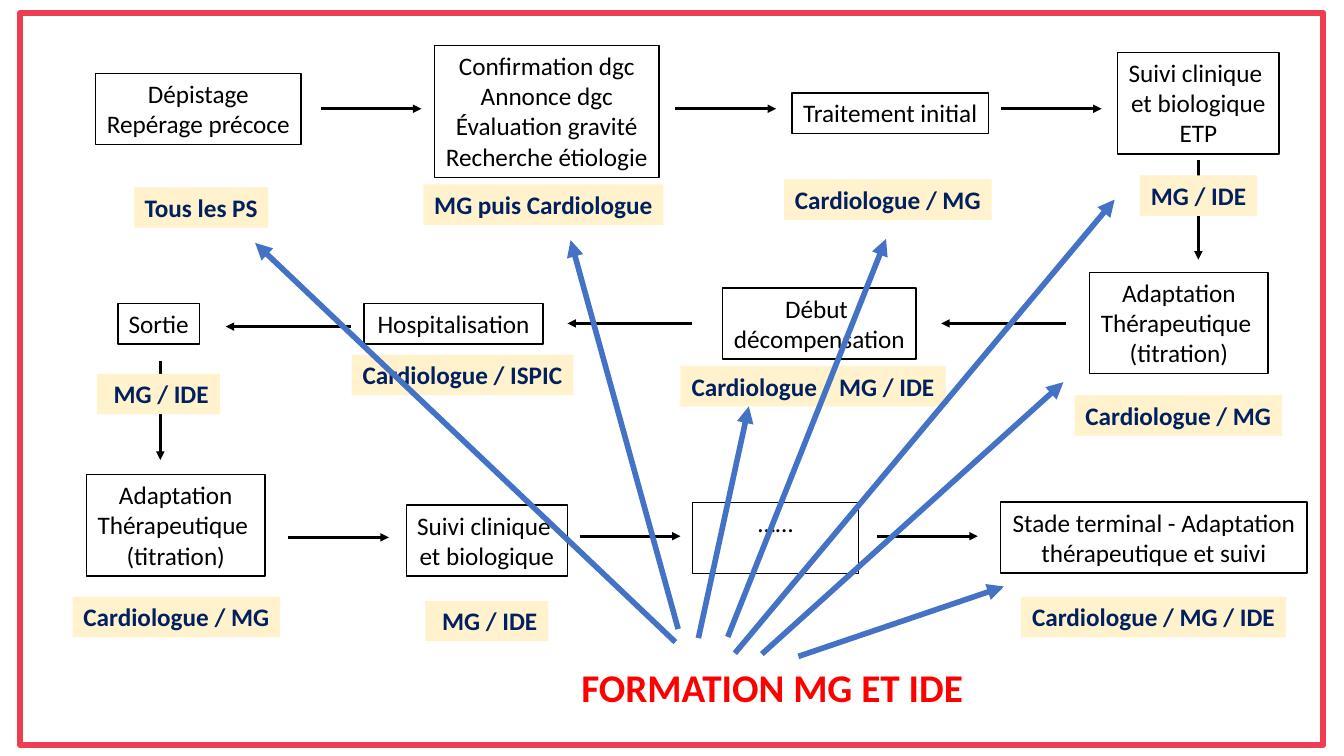
from lxml import etree
from pptx import Presentation
from pptx.dml.color import RGBColor
from pptx.enum.shapes import MSO_CONNECTOR, MSO_SHAPE
from pptx.enum.text import PP_ALIGN
from pptx.oxml.ns import qn
from pptx.util import Cm, Pt

FONT = "Calibri"
RED, BLACK, BLUE = "EE3D50", "000000", "4472C4"
CREAM, NAVY, TITLE_RED = "FFF2CC", "002060", "FF0000"
LINE_HEIGHT, BOX_PADDING = 0.77, 0.25

# All positions and lengths are in centimetres.
FRAME = (0.51, 0.33, 32.84, 18.44)
TRAINING = ("FORMATION MG ET IDE", 14.4, 16.59, 10.24)

# text, left, top, width, rows
STEPS = [
    ("Dépistage\nRepérage précoce", 2.41, 1.85, 5.18, 2),
    ("Confirmation dgc\nAnnonce dgc\nÉvaluation gravité\nRecherche étiologie",
     10.95, 1.14, 5.66, 4),
    ("Traitement initial", 19.96, 2.34, 4.95, 1),
    ("Suivi clinique \net biologique\nETP", 28.17, 1.32, 4.06, 3),
    ("Début \ndécompensation", 18.21, 7.26, 4.88, 2),
    ("Hospitalisation", 9.17, 7.65, 4.52, 1),
    ("Sortie", 2.97, 7.65, 2.06, 1),
    ("Adaptation\nThérapeutique \n(titration)", 27.46, 6.86, 4.5, 3),
    ("Adaptation\nThérapeutique \n(titration)", 2.18, 11.96, 4.5, 3),
    ("Suivi clinique \net biologique", 10.24, 12.73, 4.06, 2),
    ("……", 17.45, 12.67, 4.19, 2),
    ("Stade terminal - Adaptation\nthérapeutique et suivi", 25.22, 12.65, 7.72, 2),
]

# text, left, top, width
ROLES = [
    ("Tous les PS", 3.38, 4.72, 3.38),
    ("MG puis Cardiologue", 10.67, 4.65, 6.05),
    ("Cardiologue / MG", 19.76, 4.52, 5.23),
    ("MG / IDE", 28.73, 4.42, 2.95),
    ("Cardiologue / MG", 27.08, 9.96, 5.23),
    ("Cardiologue / MG / IDE", 17.15, 9.22, 6.68),
    ("Cardiologue / ISPIC", 8.86, 8.94, 5.59),
    (" MG / IDE", 2.44, 9.42, 3.1),
    ("Cardiologue / MG", 1.83, 15.04, 5.23),
    (" MG / IDE", 10.72, 15.14, 3.1),
    ("Cardiologue / MG / IDE", 25.73, 15.04, 6.68),
]

# start x, start y, run across, run down
FLOW = [
    (8.08, 2.74, 2.54, 0), (17.02, 2.74, 2.54, 0), (25.22, 2.74, 2.54, 0),
    (30.2, 4.04, 0, 2.5),
    (26.87, 8.15, -3.15, 0), (17.45, 8.15, -3.15, 0), (8.84, 8.23, -3.15, 0),
    (4.04, 9.09, 0, 2.5),
    (7.26, 13.54, 2.54, 0), (14.61, 13.51, 2.54, 0), (22.1, 13.51, 2.54, 0),
]

# start x, start y, end x, end y
TRAINING_ARROWS = [
    (17.02, 16.18, 6.43, 6.12),
    (18.34, 16.05, 22.33, 6.02),
    (18.52, 16.46, 28.09, 5.03),
    (19.2, 16.48, 26.8, 9.63),
    (17.6, 16.08, 18.87, 10.24),
    (20.12, 16.54, 25.3, 14.78),
    (17.09, 15.85, 14.38, 6.05),
]


def color(hex_value):
    return RGBColor.from_string(hex_value)


def outline(shape, hex_value, points):
    shape.line.color.rgb = color(hex_value)
    shape.line.width = Pt(points)


def add_label(slide, text, left, top, width, height, ink,
              size=18, bold=False, align=PP_ALIGN.CENTER):
    label = slide.shapes.add_textbox(Cm(left), Cm(top), Cm(width), Cm(height))
    label.text_frame.word_wrap = False
    label.text_frame.text = text
    for paragraph in label.text_frame.paragraphs:
        paragraph.alignment = align
        font = paragraph.font
        font.name, font.size, font.bold = FONT, Pt(size), bold
        font.color.rgb = color(ink)
    return label


def add_arrow(slide, x1, y1, x2, y2, ink, points):
    arrow = slide.shapes.add_connector(
        MSO_CONNECTOR.STRAIGHT, Cm(x1), Cm(y1), Cm(x2), Cm(y2))
    outline(arrow, ink, points)
    etree.SubElement(arrow.line._get_or_add_ln(), qn("a:tailEnd"), type="triangle")
    etree.SubElement(arrow._element.spPr, qn("a:effectLst"))


def main():
    deck = Presentation()
    deck.slide_width, deck.slide_height = Cm(33.87), Cm(19.05)
    slide = deck.slides.add_slide(deck.slide_layouts[6])

    frame = slide.shapes.add_shape(MSO_SHAPE.RECTANGLE, *map(Cm, FRAME))
    frame.shadow.inherit = False
    frame.fill.background()
    outline(frame, RED, 4.5)

    for text, left, top, width, rows in STEPS:
        height = rows * LINE_HEIGHT + BOX_PADDING
        step = add_label(slide, text, left, top, width, height, BLACK)
        outline(step, BLACK, 1)

    for x, y, across, down in FLOW:
        add_arrow(slide, x, y, x + across, y + down, BLACK, 2)

    for text, left, top, width in ROLES:
        role = add_label(slide, text, left, top, width,
                         LINE_HEIGHT + BOX_PADDING, NAVY, bold=True)
        role.fill.solid()
        role.fill.fore_color.rgb = color(CREAM)

    add_label(slide, *TRAINING, 1.45, TITLE_RED,
              size=28, bold=True, align=PP_ALIGN.LEFT)
    for ends in TRAINING_ARROWS:
        add_arrow(slide, *ends, BLUE, 4)

    deck.save("out.pptx")


if __name__ == "__main__":
    main()
